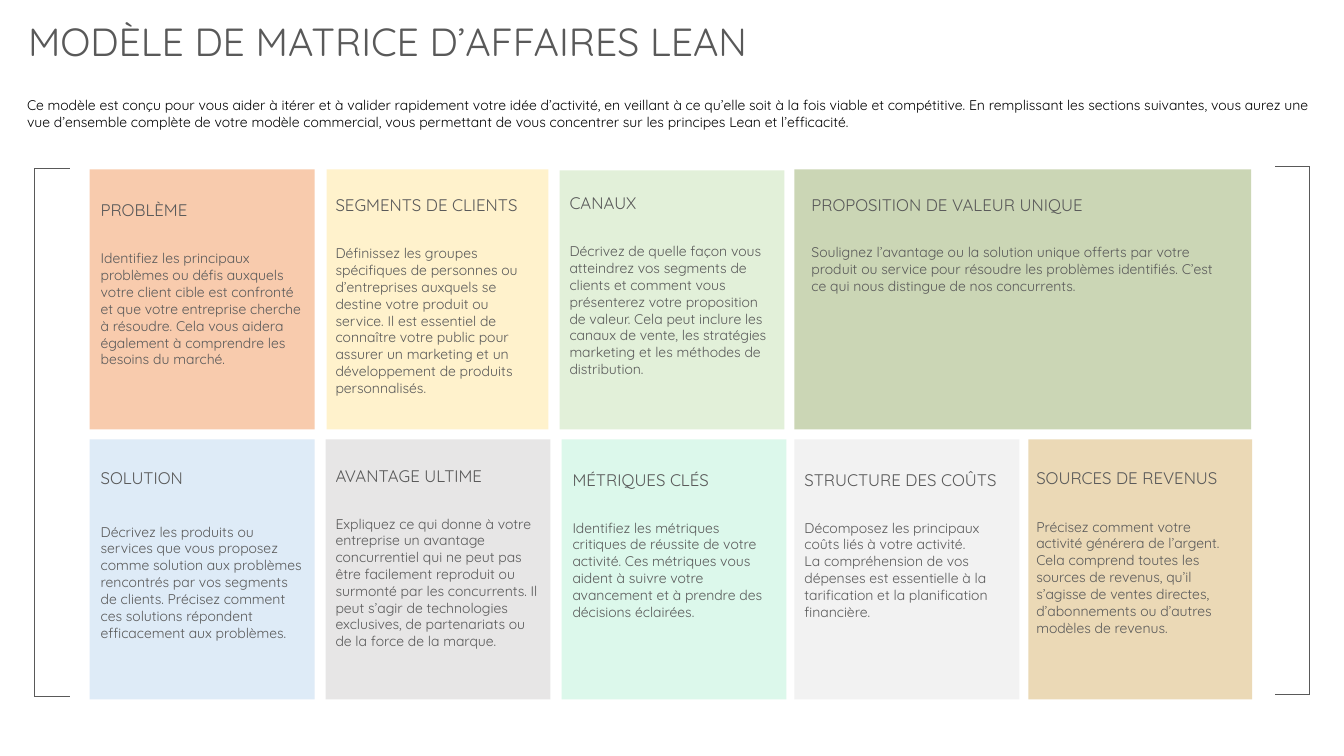
from typing import NamedTuple

from lxml import etree
from pptx import Presentation
from pptx.dml.color import RGBColor
from pptx.enum.shapes import MSO_CONNECTOR, MSO_SHAPE
from pptx.enum.text import MSO_AUTO_SIZE
from pptx.oxml.ns import qn
from pptx.util import Inches, Pt

RECTANGLE = MSO_SHAPE.RECTANGLE
STRAIGHT = MSO_CONNECTOR.STRAIGHT
GROW = MSO_AUTO_SIZE.SHAPE_TO_FIT_TEXT
GREY = "595959"
TITLE = {"name": "Quicksand", "size": Pt(28), "color": GREY}
INTRO = {"name": "Quicksand", "size": Pt(10), "color": "000000"}
HEADING = {"name": "Quicksand", "size": Pt(12), "color": GREY}
BODY = {"name": "Quicksand", "size": Pt(10), "color": GREY}
HEADING_HEIGHT = 0.3
TOP_ROW, BOTTOM_ROW = 1.68, 4.36


class Card(NamedTuple):
    """One section of the canvas, with lengths in inches."""
    fill: str
    left: float
    top: float
    width: float
    height: float
    text_left: float
    text_width: float
    heading_top: float
    body_top: float
    body_height: float
    heading: str
    body: str


CARDS = [
    Card("F8CBAD", 0.89, TOP_ROW, 2.23, 2.58, 0.9, 2.22, 1.93, 2.43, 1.28, "PROBLÈME",
         "Identifiez les principaux problèmes ou défis auxquels votre client cible est "
         "confronté et que votre entreprise cherche à résoudre. Cela vous aidera également "
         "à comprendre les besoins du marché."),
    Card("FFF2CC", 3.24, TOP_ROW, 2.2, 2.58, 3.23, 2.22, 1.88, 2.38, 1.11,
         "SEGMENTS DE CLIENTS",
         "Définissez les groupes spécifiques de personnes ou d’entreprises auxquels se "
         "destine votre produit ou service. Il est essentiel de connaître votre public pour "
         "assurer un marketing et un développement de produits personnalisés."),
    Card("E2F0D9", 5.55, 1.69, 2.23, 2.57, 5.55, 2.22, 1.86, 2.36, 1.28, "CANAUX",
         "Décrivez de quelle façon vous atteindrez vos segments de clients et comment vous "
         "présenterez votre proposition de valeur. Cela peut inclure les canaux de vente, "
         "les stratégies marketing et les méthodes de distribution."),
    Card("CBD6B5", 7.88, TOP_ROW, 4.53, 2.58, 7.95, 4.3, 1.88, 2.37, 0.61,
         "PROPOSITION DE VALEUR UNIQUE",
         "Soulignez l’avantage ou la solution unique offerts par votre produit ou service "
         "pour résoudre les problèmes identifiés. C’est ce qui nous distingue de nos "
         "concurrents."),
    Card("DEEBF7", 0.89, BOTTOM_ROW, 2.23, 2.58, 0.9, 2.22, 4.59, 5.14, 1.45, "SOLUTION",
         "Décrivez les produits ou services que vous proposez comme solution aux problèmes "
         "rencontrés par vos segments de clients. Précisez comment ces solutions répondent "
         "efficacement aux problèmes."),
    Card("E7E6E6", 3.23, BOTTOM_ROW, 2.23, 2.58, 3.23, 2.2, 4.57, 5.06, 1.45,
         "AVANTAGE ULTIME",
         "Expliquez ce qui donne à votre entreprise un avantage concurrentiel qui ne peut "
         "pas être facilement reproduit ou surmonté par les concurrents. Il peut s’agir de "
         "technologies exclusives, de partenariats ou de la force de la marque."),
    Card("DCF8EB", 5.57, BOTTOM_ROW, 2.23, 2.58, 5.58, 2.22, 4.61, 5.1, 0.94,
         "MÉTRIQUES CLÉS",
         "Identifiez les métriques critiques de réussite de votre activité. Ces métriques "
         "vous aident à suivre votre avancement et à prendre des décisions éclairées."),
    Card("F2F2F2", 7.88, BOTTOM_ROW, 2.23, 2.58, 7.88, 2.22, 4.61, 5.1, 1.11,
         "STRUCTURE DES COÛTS",
         "Décomposez les principaux coûts liés à votre activité.\n"
         "La compréhension de vos dépenses est essentielle à la tarification et la "
         "planification financière."),
    Card("EBD9B6", 10.2, BOTTOM_ROW, 2.22, 2.58, 10.18, 2.22, 4.59, 5.09, 1.11,
         "SOURCES DE REVENUS",
         "Précisez comment votre activité générera de l’argent. Cela comprend toutes les "
         "sources de revenus, qu’il s’agisse de ventes directes, d’abonnements ou d’autres "
         "modèles de revenus."),
]


def paint(color, value):
    """Set a colour format from a hex string."""
    color.rgb = RGBColor.from_string(value)


def add_text(page, left, top, width, height, text, style):
    """Add a wrapping text box in one style."""
    box = page.shapes.add_textbox(*map(Inches, (left, top, width, height)))
    frame = box.text_frame
    frame.word_wrap = True
    frame.auto_size = GROW
    frame.text = text
    for para in frame.paragraphs:
        for span in para.runs:
            for key, value in style.items():
                if key == "color":
                    paint(span.font.color, value)
                else:
                    setattr(span.font, key, value)


def add_panel(page, card):
    """Add the coloured background of a card."""
    panel = page.shapes.add_shape(
        RECTANGLE, *map(Inches, (card.left, card.top, card.width, card.height)))
    panel.shadow.inherit = False
    panel.fill.solid()
    paint(panel.fill.fore_color, card.fill)
    panel.line.fill.background()


def add_card(page, card):
    """Add a card with its heading and body text."""
    add_panel(page, card)
    add_text(page, card.text_left, card.heading_top, card.text_width, HEADING_HEIGHT,
             card.heading, HEADING)
    add_text(page, card.text_left, card.body_top, card.text_width, card.body_height,
             card.body, BODY)


def add_bracket(page, spine, tip, top, bottom):
    """Add a square bracket as a group of three lines."""
    group = page.shapes.add_group_shape()
    corners = [(tip, top), (spine, top), (spine, bottom), (tip, bottom)]
    for start, end in zip(corners, corners[1:]):
        line = group.shapes.add_connector(STRAIGHT, *map(Inches, start + end))
        paint(line.line.color, GREY)
        line.line.width = Pt(1)
        etree.SubElement(line._element.spPr, qn("a:effectLst"))


def main():
    """Build the lean canvas slide."""
    deck = Presentation()
    deck.slide_width, deck.slide_height = Inches(13.33), Inches(7.5)
    page = deck.slides.add_slide(deck.slide_layouts[6])
    add_text(page, 0.18, 0.12, 12.95, 0.57, "MODÈLE DE MATRICE D’AFFAIRES LEAN", TITLE)
    add_text(page, 0.17, 0.91, 12.9, 0.44,
             "Ce modèle est conçu pour vous aider à itérer et à valider rapidement votre idée "
             "d’activité, en veillant à ce qu’elle soit à la fois viable et compétitive. En "
             "remplissant les sections suivantes, vous aurez une vue d’ensemble complète de "
             "votre modèle commercial, vous permettant de vous concentrer sur les principes "
             "Lean et l’efficacité.", INTRO)
    for card in CARDS:
        add_card(page, card)
    add_bracket(page, 0.34, 0.69, 1.67, 6.91)
    add_bracket(page, 12.99, 12.65, 1.65, 6.89)
    deck.save("out.pptx")


if __name__ == "__main__":
    main()
